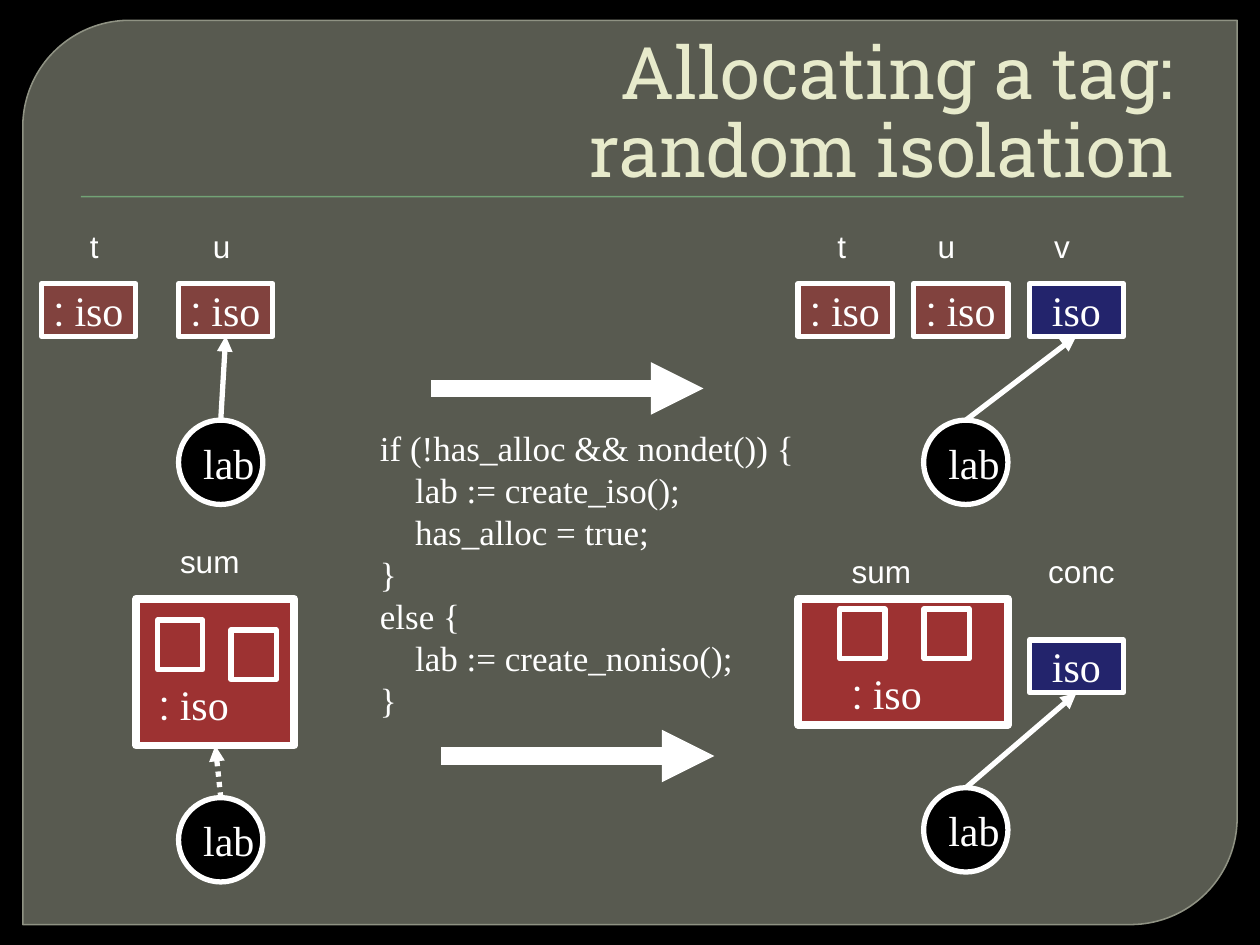
from lxml import etree
from pptx import Presentation
from pptx import util as u
from pptx.dml.color import RGBColor
from pptx.enum import dml, shapes, text
from pptx.oxml.ns import qn

SERIF = "Times New Roman"
WHITE, RED, NAVY = "FFFFFF", "9D3232", "000080"
KIND, ALIGN, ANCHOR = shapes.MSO_SHAPE, text.PP_ALIGN, text.MSO_ANCHOR
rgb = RGBColor.from_string


def add_block(kind, box, fill, line=None, weight=3, opacity=100):
    """Add a preset shape; box is left, top, width, height in cm."""
    block = slide.shapes.add_shape(kind, *map(u.Cm, box))
    block.shadow.inherit = False
    block.fill.solid()
    block.fill.fore_color.rgb = rgb(fill)
    if opacity < 100:
        colour = block.fill._xPr.find(f".//{qn('a:srgbClr')}")
        etree.SubElement(colour, qn("a:alpha"), val=str(opacity * 1000))
    if line:
        block.line.color.rgb = rgb(line)
        block.line.width = u.Pt(weight)
    else:
        block.line.fill.background()
    return block


def write(holder, *lines, font=SERIF, size=24, colour=WHITE, align=ALIGN.LEFT,
          anchor=ANCHOR.TOP, wrap=True, spacing=None, lead=""):
    """Fill a shape with lines; a lead is set in Roboto, a tab is an indent."""
    frame = holder.text_frame
    frame.word_wrap = wrap
    frame.vertical_anchor = anchor
    for number, line in enumerate(lines):
        paragraph = frame.add_paragraph() if number else frame.paragraphs[0]
        paragraph.alignment = align
        paragraph.line_spacing = spacing
        if line.startswith("\t"):
            paragraph._p.get_or_add_pPr().set("marL", str(u.Cm(0.71)))
        for part, face in ((lead, "Roboto"), (line.strip(), font)):
            if part:
                run = paragraph.add_run()
                run.text = part
                run.font.name = face
                run.font.size = u.Pt(size)
                run.font.color.rgb = rgb(colour)


deck = Presentation()
deck.slide_width, deck.slide_height = u.Cm(25.4), u.Cm(19.05)
slide = deck.slides.add_slide(deck.slide_layouts[6])
slide.background.fill.solid()
slide.background.fill.fore_color.rgb = rgb("000000")

# Panel, rule and title
panel = add_block(KIND.ROUND_2_DIAG_RECTANGLE, (0.46, 0.41, 24.48, 18.23),
                  "888B7B", "8F9283", 0.87, opacity=65)
panel.adjustments[0], panel.adjustments[1] = 0.118, 0
add_block(KIND.RECTANGLE, (1.63, 3.95, 22.23, 0.03), "72A376")
title = slide.shapes.add_textbox(u.Cm(1.48), u.Cm(0.85), u.Cm(22.44), u.Cm(3.18))
write(title, "Allocating a tag:", "random isolation", font="Roboto Slab", size=41.4,
      colour="E7EACB", align=ALIGN.RIGHT, anchor=ANCHOR.BOTTOM, spacing=0.9)

# Labels that point at tags
for left, top in ((3.6, 8.47), (18.62, 8.47), (3.6, 16.08), (18.62, 15.88)):
    label = add_block(KIND.OVAL, (left, top, 1.7, 1.7), "000000", WHITE)
    write(label, "lab", anchor=ANCHOR.MIDDLE, wrap=False)

# Tags
for left, top, fill, lead in (
    (0.84, 5.72, RED, ": "), (3.6, 5.72, RED, ": "),
    (16.09, 5.72, RED, ": "), (18.42, 5.72, RED, ": "),
    (20.75, 5.72, NAVY, ""), (20.75, 12.9, NAVY, ""),
):
    tag = add_block(KIND.RECTANGLE, (left, top, 1.9, 1.06), fill, WHITE, opacity=60)
    write(tag, "iso", lead=lead, align=ALIGN.CENTER, anchor=ANCHOR.MIDDLE, wrap=False)

# Pointers (thin) and transitions (thick)
for x1, y1, x2, y2, weight, dash in (
    (4.45, 8.47, 4.55, 6.77, 3, None),
    (19.47, 8.47, 21.7, 6.77, 3, None),
    (4.45, 16.08, 4.34, 15.03, 3, dml.MSO_LINE.ROUND_DOT),
    (19.47, 15.88, 21.7, 13.97, 3, None),
    (8.69, 7.83, 14.18, 7.83, 10, None),
    (8.89, 15.24, 14.4, 15.24, 10, None),
):
    arrow = slide.shapes.add_connector(shapes.MSO_CONNECTOR.STRAIGHT,
                                       *map(u.Cm, (x1, y1, x2, y2)))
    arrow.line.color.rgb = rgb(WHITE)
    arrow.line.width = u.Pt(weight)
    if dash:
        arrow.line.dash_style = dash
    etree.SubElement(arrow.line._get_or_add_ln(), qn("a:tailEnd"), type="triangle")
    etree.SubElement(arrow._element.spPr, qn("a:effectLst"))

# Summary objects, each holding two members
for box, members, caption in (
    ((2.75, 12.07, 3.18, 2.96), ((3.18, 12.5), (4.66, 12.7)), (2.96, 13.55)),
    ((16.09, 12.07, 4.23, 2.54), ((16.93, 12.28), (18.63, 12.28)), (16.93, 13.34)),
):
    add_block(KIND.RECTANGLE, box, RED, WHITE, 4.5)
    for left, top in members:
        add_block(KIND.RECTANGLE, (left, top, 0.91, 1), RED, WHITE)
    state = slide.shapes.add_textbox(*map(u.Cm, (*caption, 2.54, 1.27)))
    write(state, "iso", lead=": ")

# Object names, centred on their objects
NAME_WIDTH = 2.2
for name, centre, top in (
    ("t", 1.9, 4.45), ("u", 4.47, 4.45),
    ("t", 16.97, 4.45), ("u", 19.08, 4.45), ("v", 21.41, 4.45),
    ("sum", 4.23, 10.8), ("sum", 17.77, 11), ("conc", 21.8, 11),
):
    heading = slide.shapes.add_textbox(
        *map(u.Cm, (centre - NAME_WIDTH / 2, top, NAME_WIDTH, 1.01)))
    write(heading, name, font="Arial", size=18, align=ALIGN.CENTER)

# Allocation code
code = slide.shapes.add_textbox(u.Cm(7.41), u.Cm(8.47), u.Cm(9.31), u.Cm(6.25))
write(code, "if (!has_alloc && nondet()) {", "\tlab := create_iso();",
      "\thas_alloc = true;", "}", "else {", "\tlab := create_noniso();", "}", size=20)

deck.save("out.pptx")
